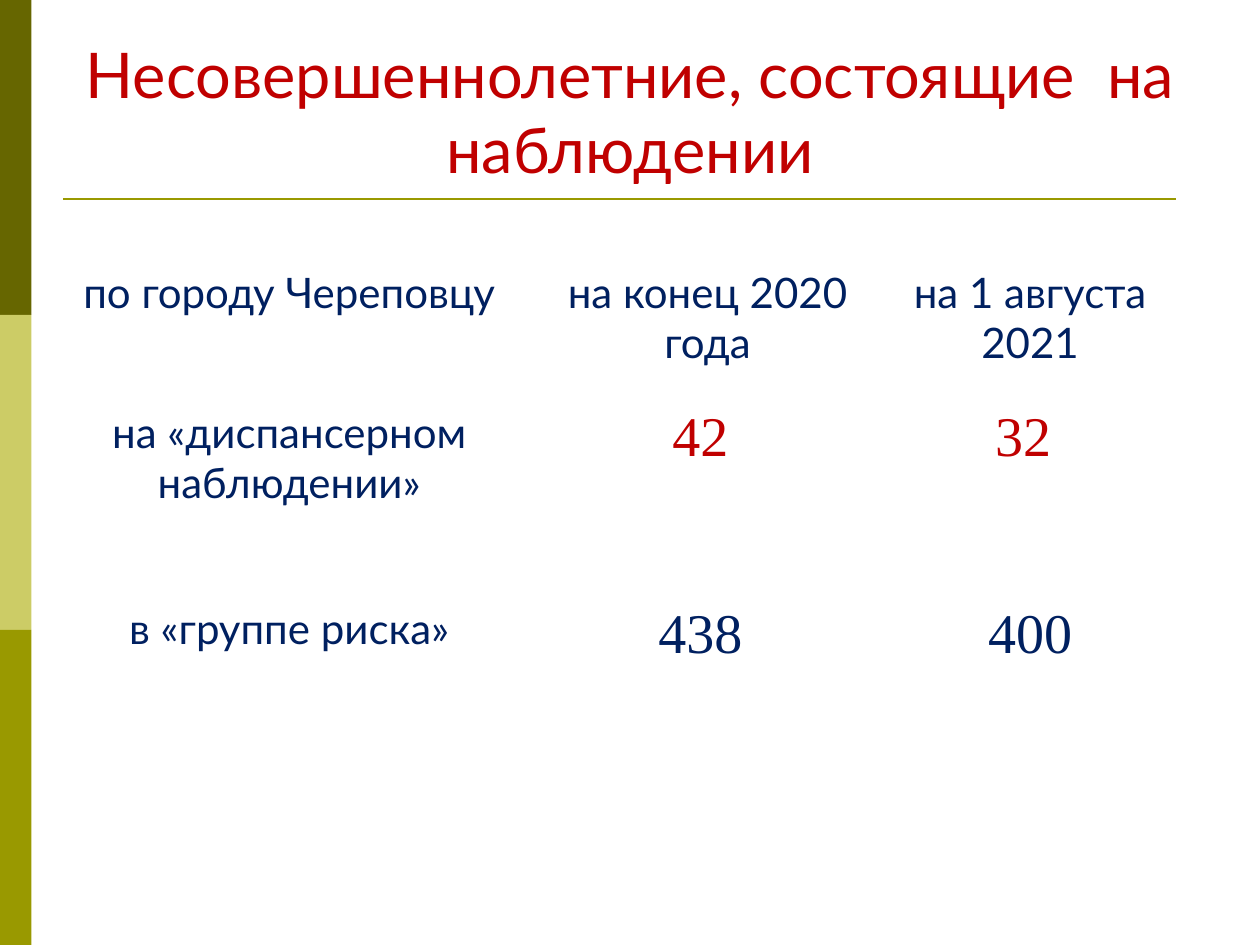
from pptx import Presentation
from pptx.dml.color import RGBColor
from pptx.enum.shapes import MSO_CONNECTOR, MSO_SHAPE
from pptx.enum.text import MSO_ANCHOR, PP_ALIGN
from pptx.oxml.ns import qn
from pptx.util import Inches, Pt
from lxml import etree

DARK_OLIVE = RGBColor(0x66, 0x66, 0x00)
LIGHT_OLIVE = RGBColor(0xCC, 0xCC, 0x66)
OLIVE = RGBColor(0x99, 0x99, 0x00)
RED = RGBColor(0xC0, 0x00, 0x00)
NAVY = RGBColor(0x00, 0x20, 0x60)

LABEL = {"name": "Lato", "size": Pt(24), "color": NAVY}
RED_FIGURE = {"name": "Times New Roman", "size": Pt(32), "color": RED}
NAVY_FIGURE = {**RED_FIGURE, "color": NAVY}
TITLE = {"name": "Lato", "size": Pt(36), "color": RED}

COLUMNS = [3.65, 2.99, 2.13]
ROWS = [
    (1.52, 0.42, LABEL, ["по городу Череповцу", "на конец 2020 года", "на 1 августа 2021"]),
    (1.56, 0.01, RED_FIGURE, ["на «диспансерном наблюдении»", "42 ", "32 "]),
    (1.87, 0.01, NAVY_FIGURE, ["в «группе риска»", "438 ", "400"]),
]


def write(tf, text, style):
    p = tf.paragraphs[0]
    p.alignment = PP_ALIGN.CENTER
    r = p.add_run()
    r.text = text
    for key, value in style.items():
        if key == "color":
            r.font.color.rgb = value
        else:
            setattr(r.font, key, value)


def add_side_bar(s, left, top, width, height):
    colors = [DARK_OLIVE, LIGHT_OLIVE, OLIVE]
    step = height / len(colors)
    for i, color in enumerate(colors):
        sp = s.shapes.add_shape(MSO_SHAPE.RECTANGLE, Inches(left), Inches(top + i * step),
                                Inches(width), Inches(step))
        sp.shadow.inherit = False
        sp.fill.solid()
        sp.fill.fore_color.rgb = color
        sp.line.fill.background()


def add_rule(s, left, top, width):
    line = s.shapes.add_connector(MSO_CONNECTOR.STRAIGHT, Inches(left), Inches(top),
                                  Inches(left + width), Inches(top))
    line.line.color.rgb = OLIVE
    line.line.width = Pt(1.5)
    etree.SubElement(line._element.spPr, qn("a:effectLst"))


def add_title(s, left, top, width, height):
    sp = s.shapes.add_textbox(Inches(left), Inches(top), Inches(width), Inches(height))
    tf = sp.text_frame
    settings = {"word_wrap": True, "vertical_anchor": MSO_ANCHOR.BOTTOM, "margin_bottom": 0}
    for key, value in settings.items():
        setattr(tf, key, value)
    write(tf, "Несовершеннолетние, состоящие  на наблюдении", TITLE)


def add_counts_table(s, left, top, width, height):
    frame = s.shapes.add_table(len(ROWS), len(COLUMNS), Inches(left), Inches(top),
                               Inches(width), Inches(height))
    table = frame.table
    table.first_row = table.horz_banding = False
    table._tbl.tblPr.find(qn("a:tableStyleId")).text = "{2D5ABB26-0587-4C30-8999-92F81FD0307C}"
    for column, column_width in zip(table.columns, COLUMNS):
        column.width = Inches(column_width)
    for row, (row_height, margin_top, figure, texts) in zip(table.rows, ROWS):
        row.height = Inches(row_height)
        margins = {"margin_left": Inches(0.01), "margin_right": Inches(0.01),
                   "margin_top": Inches(margin_top), "margin_bottom": 0}
        for i, (cell, text) in enumerate(zip(row.cells, texts)):
            cell.fill.background()
            for key, value in margins.items():
                setattr(cell, key, value)
            write(cell.text_frame, text, figure if i else LABEL)


def main():
    prs = Presentation()
    prs.slide_width, prs.slide_height = Inches(10), Inches(7.5)
    s = prs.slides.add_slide(prs.slide_layouts[6])
    add_side_bar(s, 0, 0, 0.25, 7.5)
    add_rule(s, 0.5, 1.58, 8.83)
    add_title(s, 0.5, 0.52, 9, 0.96)
    add_counts_table(s, 0.47, 1.7, 8.78, 4.94)
    prs.save("out.pptx")


if __name__ == "__main__":
    main()
